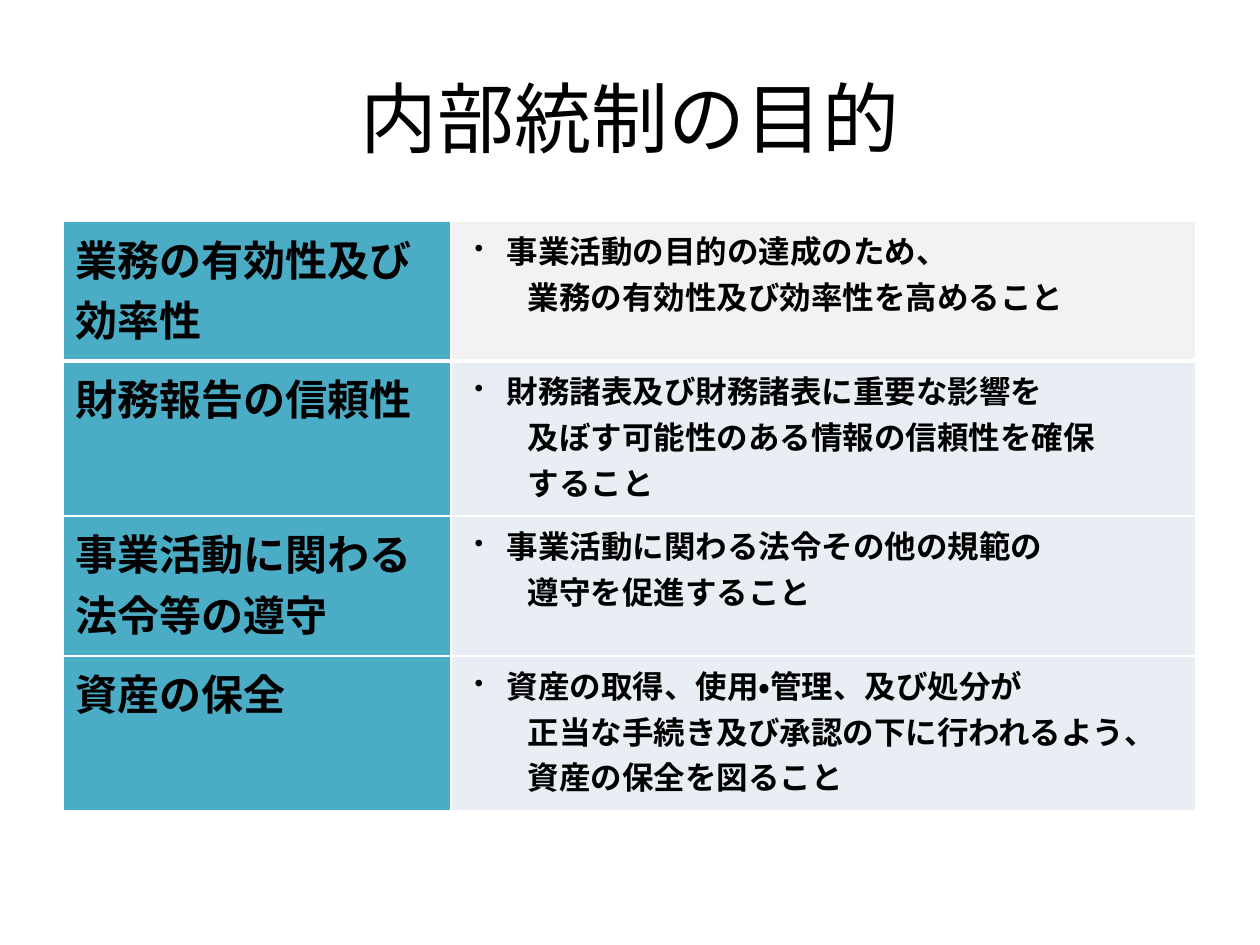
"""Build the slide on the four objectives of internal control."""
from dataclasses import dataclass

from lxml.etree import SubElement
from pptx import Presentation
from pptx.dml.color import RGBColor
from pptx.enum.lang import MSO_LANGUAGE_ID
from pptx.enum.text import MSO_ANCHOR, PP_ALIGN
from pptx.oxml.ns import qn
from pptx.util import Emu, Pt


@dataclass(frozen=True)
class Theme:
    """Colours, font and type sizes of the slide."""
    font: str = "Calibri"
    text: str = "000000"
    border: str = "FFFFFF"
    heading_fill: str = "4BACC6"
    first_fill: str = "F2F2F2"
    body_fill: str = "E9EDF4"
    title_size: int = 44
    heading_size: int = 24
    body_size: int = 18
    thin_border: int = 1
    thick_border: int = 3


@dataclass(frozen=True)
class Objective:
    """One table row: an objective and the lines that explain it."""
    heading: str
    lines: tuple[str, ...]
    height: int
    fill: str


THEME = Theme()
PX = 914400 / 126
TITLE = "内部統制の目的"
COLUMN_WIDTHS = (388, 745)
BULLET_INDENT = 43
LINE_INDENT = 64
OBJECTIVES = (
    Objective(
        "業務の有効性及び効率性",
        ("事業活動の目的の達成のため、", "業務の有効性及び効率性を高めること"),
        140, THEME.first_fill,
    ),
    Objective(
        "財務報告の信頼性",
        ("財務諸表及び財務諸表に重要な影響を",
         "及ぼす可能性のある情報の信頼性を確保", "すること"),
        155, THEME.body_fill,
    ),
    Objective(
        "事業活動に関わる法令等の遵守",
        ("事業活動に関わる法令その他の規範の", "遵守を促進すること"),
        140, THEME.body_fill,
    ),
    Objective(
        "資産の保全",
        ("資産の取得、使用・管理、及び処分が",
         "正当な手続き及び承認の下に行われるよう、", "資産の保全を図ること"),
        155, THEME.body_fill,
    ),
)


def px(length: int) -> Emu:
    """Turn a length in px into EMU."""
    return Emu(round(length * PX))


def style_paragraph(paragraph, size: int, bold: bool) -> None:
    """Set the font of a whole paragraph."""
    font = paragraph.font
    font.name = THEME.font
    font.size = Pt(size)
    font.bold = bold
    font.language_id = MSO_LANGUAGE_ID.JAPANESE
    font.color.rgb = RGBColor.from_string(THEME.text)


def indent_paragraph(paragraph, bulleted: bool) -> None:
    """Hang a bullet before the first line or indent a following line."""
    properties = paragraph._p.get_or_add_pPr()
    margin = px(BULLET_INDENT if bulleted else LINE_INDENT)
    properties.set("marL", str(margin))
    properties.set("indent", str(-margin if bulleted else 0))
    if bulleted:
        SubElement(properties, qn("a:buFont"), typeface=THEME.font)
        SubElement(properties, qn("a:buChar"), char="・")
    else:
        SubElement(properties, qn("a:buNone"))


def style_cell(cell, fill: str, top: int, bottom: int) -> None:
    """Give a cell its borders and fill."""
    properties = cell._tc.get_or_add_tcPr()
    widths = {"L": THEME.thin_border, "R": THEME.thin_border, "T": top, "B": bottom}
    for side, width in widths.items():
        line = SubElement(properties, qn(f"a:ln{side}"), w=str(Pt(width)))
        solid = SubElement(line, qn("a:solidFill"))
        SubElement(solid, qn("a:srgbClr"), val=THEME.border)
    cell.fill.solid()
    cell.fill.fore_color.rgb = RGBColor.from_string(fill)


def add_title(slide, text: str) -> None:
    """Add the centred slide title."""
    box = slide.shapes.add_textbox(px(63), px(38), px(1134), px(158))
    frame = box.text_frame
    frame.word_wrap = True
    frame.vertical_anchor = MSO_ANCHOR.MIDDLE
    frame.text = text
    paragraph = frame.paragraphs[0]
    paragraph.alignment = PP_ALIGN.CENTER
    style_paragraph(paragraph, THEME.title_size, False)


def fill_row(table, index: int, objective: Objective) -> None:
    """Write one objective into its table row."""
    table.rows[index].height = px(objective.height)
    heading, body = table.cell(index, 0), table.cell(index, 1)
    top = THEME.thick_border if index == 1 else THEME.thin_border
    bottom = THEME.thick_border if index == 0 else THEME.thin_border
    style_cell(heading, THEME.heading_fill, top, bottom)
    style_cell(body, objective.fill, top, bottom)
    heading.text = objective.heading
    style_paragraph(heading.text_frame.paragraphs[0], THEME.heading_size, True)
    body.text = "\n".join(objective.lines)
    for number, paragraph in enumerate(body.text_frame.paragraphs):
        indent_paragraph(paragraph, number == 0)
        style_paragraph(paragraph, THEME.body_size, True)


def add_objectives(slide, objectives: tuple[Objective, ...]) -> None:
    """Add the table of objectives."""
    height = sum(objective.height for objective in objectives)
    frame = slide.shapes.add_table(
        len(objectives), len(COLUMN_WIDTHS),
        px(63), px(221), px(sum(COLUMN_WIDTHS)), px(height),
    )
    table = frame.table
    table.first_row = False
    table.horz_banding = False
    for column, width in zip(table.columns, COLUMN_WIDTHS):
        column.width = px(width)
    for index, objective in enumerate(objectives):
        fill_row(table, index, objective)


def main() -> None:
    """Build and save the deck."""
    deck = Presentation()
    deck.slide_width, deck.slide_height = px(1260), px(945)
    slide = deck.slides.add_slide(deck.slide_layouts[6])
    add_title(slide, TITLE)
    add_objectives(slide, OBJECTIVES)
    deck.save("out.pptx")


if __name__ == "__main__":
    main()
